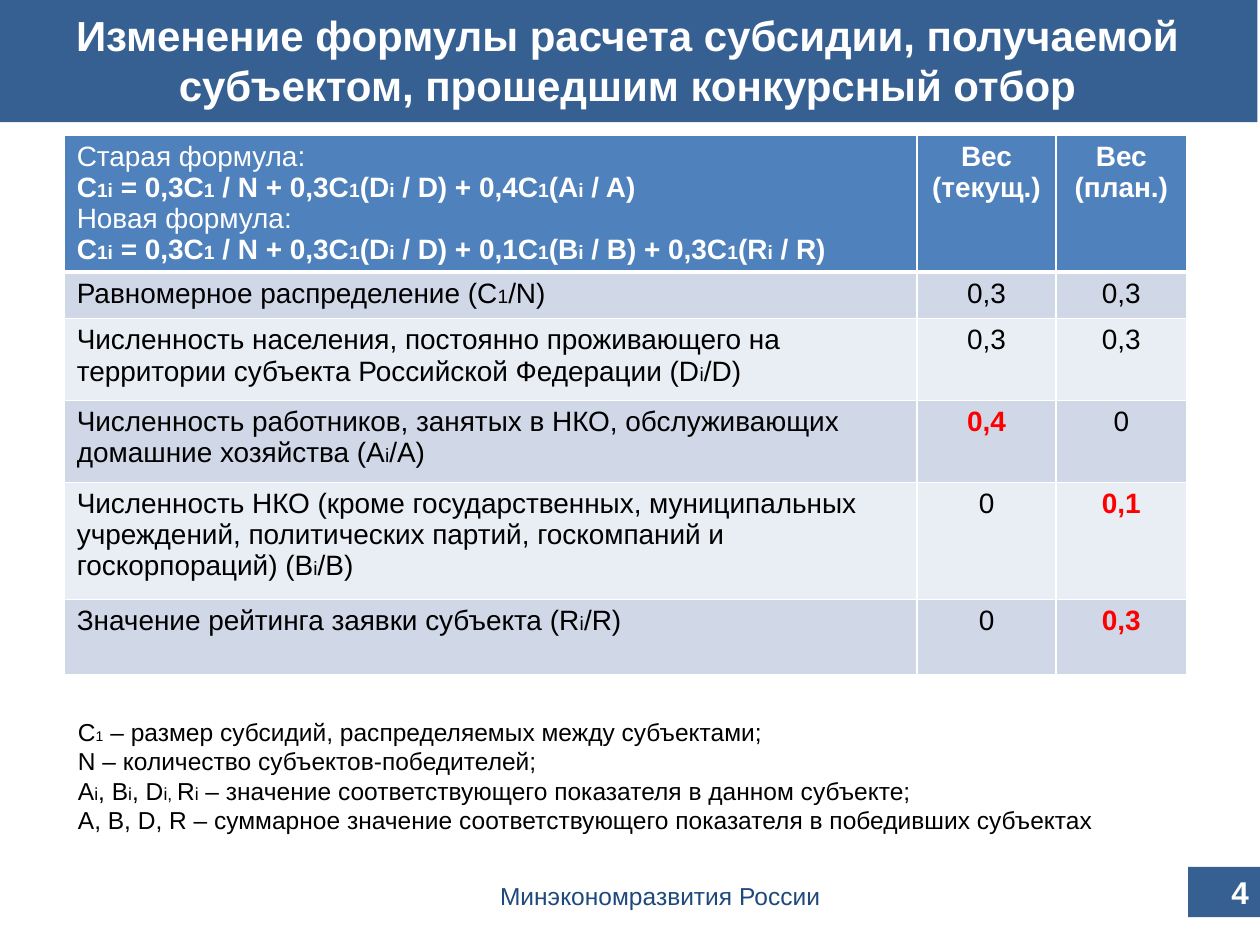
from pptx import Presentation
from pptx.dml.color import RGBColor
from pptx.enum.shapes import MSO_SHAPE
from pptx.enum.text import MSO_ANCHOR, MSO_AUTO_SIZE, PP_ALIGN
from pptx.oxml import parse_xml
from pptx.oxml.ns import nsdecls
from pptx.util import Inches, Pt

LEFT, CENTER, RIGHT = PP_ALIGN.LEFT, PP_ALIGN.CENTER, PP_ALIGN.RIGHT
MIDDLE, NO_FIT = MSO_ANCHOR.MIDDLE, MSO_AUTO_SIZE.NONE
RECTANGLE = MSO_SHAPE.RECTANGLE

FONT = "Arial"
WHITE, BLACK, RED = "FFFFFF", "000000", "FF0000"
NAVY, FOOTER_BLUE, HEADER_BLUE = "376092", "1F497D", "4F81BD"
BANDS = ["D0D8E8", "E9EDF4"]

# Small index characters stand between tildes.
TITLE = "Изменение формулы расчета субсидии, получаемой субъектом, прошедшим конкурсный отбор"
FORMULAS = [
    ("Старая формула:", False),
    ("С~1i~ = 0,3С~1~ / N + 0,3С~1~(D~i~ / D) + 0,4С~1~(A~i~ / A)", True),
    ("Новая формула:", False),
    ("С~1i~ = 0,3С~1~ / N + 0,3С~1~(D~i~ / D) + 0,1С~1~(В~i~ / В) + 0,3С~1~(R~i~ / R)", True),
]
WEIGHT_HEADS = ["Вес (текущ.)", "Вес (план.)"]
# criterion, current weight, planned weight, row height
CRITERIA = [
    ("Равномерное распределение (С~1~/N)", "0,3", "0,3", 0.37),
    ("Численность населения, постоянно проживающего на территории "
     "субъекта Российской Федерации (D~i~/D)", "0,3", "0,3", 0.65),
    ("Численность работников, занятых в НКО, обслуживающих "
     "домашние хозяйства (A~i~/A)", "0,4", "0", 0.65),
    ("Численность НКО (кроме государственных, муниципальных учреждений, "
     "политических партий, госкомпаний и госкорпораций) (B~i~/B)", "0", "0,1", 0.93),
    ("Значение рейтинга заявки субъекта (R~i~/R)", "0", "0,3", 0.6),
]
# note, size of its index characters
NOTES = [
    ("C~1~ – размер субсидий, распределяемых между субъектами;", 8),
    ("N – количество субъектов-победителей;", 10),
    ("A~i~, B~i~, D~i, ~R~i~ – значение соответствующего показателя в данном субъекте;", 10),
    ("А, B, D, R – суммарное значение соответствующего показателя в победивших субъектах", 10),
]
FOOTER = "Минэкономразвития России"
PAGE_NUMBER = "4"

COLUMN_WIDTHS = [6.77, 1.1, 1.04]
HEADER_HEIGHT = 1.08


def rgb(color):
    return RGBColor.from_string(color)


def write(paragraph, text, size, color, bold=False, align=LEFT, index_size=11):
    """Write text, setting the parts between tildes in index_size."""
    paragraph.alignment = align
    for number, part in enumerate(text.split("~")):
        if not part:
            continue
        run = paragraph.add_run()
        run.text = part
        run.font.name = FONT
        run.font.size = Pt(index_size if number % 2 else size)
        run.font.bold = bold
        run.font.color.rgb = rgb(color)


def paragraphs(frame, count):
    return [frame.paragraphs[0]] + [frame.add_paragraph() for _ in range(count - 1)]


def place(shape, left, top, width, height):
    shape.left, shape.top = Inches(left), Inches(top)
    shape.width, shape.height = Inches(width), Inches(height)


def style_bar(shape):
    shape.fill.solid()
    shape.fill.fore_color.rgb = rgb(NAVY)
    shape.line.fill.background()
    shape.text_frame.vertical_anchor = MIDDLE
    shape.text_frame.auto_size = NO_FIT


def style_cell(cell, row, fill):
    """Draw white borders, heavy under the header row, and fill the cell."""
    widths = {"lnL": 1, "lnR": 1, "lnT": 3 if row == 1 else 1, "lnB": 3 if row == 0 else 1}
    properties = cell._tc.get_or_add_tcPr()
    for side, width in widths.items():
        properties.append(parse_xml(
            f'<a:{side} {nsdecls("a")} w="{Pt(width)}"><a:solidFill>'
            f'<a:srgbClr val="{WHITE}"/></a:solidFill></a:{side}>'))
    cell.fill.solid()
    cell.fill.fore_color.rgb = rgb(fill)


def add_text(slide, box, lines, size, color, align=LEFT):
    frame = slide.shapes.add_textbox(*map(Inches, box)).text_frame
    frame.word_wrap = True
    for paragraph, (text, index_size) in zip(paragraphs(frame, len(lines)), lines):
        write(paragraph, text, size, color, align=align, index_size=index_size)


def add_weights_table(slide):
    heights = [HEADER_HEIGHT] + [criterion[-1] for criterion in CRITERIA]
    table = slide.shapes.add_table(
        len(heights), len(COLUMN_WIDTHS), Inches(0.51), Inches(1.07),
        Inches(sum(COLUMN_WIDTHS)), Inches(sum(heights))).table
    for column, width in zip(table.columns, COLUMN_WIDTHS):
        column.width = Inches(width)
    for number, (row, height) in enumerate(zip(table.rows, heights)):
        row.height = Inches(height)
        for cell in row.cells:
            style_cell(cell, number, BANDS[(number - 1) % 2] if number else HEADER_BLUE)

    formula_frame = table.cell(0, 0).text_frame
    for paragraph, (text, bold) in zip(paragraphs(formula_frame, len(FORMULAS)), FORMULAS):
        write(paragraph, text, 16, WHITE, bold)
    for column, head in enumerate(WEIGHT_HEADS, 1):
        write(table.cell(0, column).text_frame.paragraphs[0], head, 16, WHITE, True, CENTER)

    for row, (criterion, current, planned, _) in enumerate(CRITERIA, 1):
        write(table.cell(row, 0).text_frame.paragraphs[0], criterion, 16, BLACK)
        for column, weight in enumerate((current, planned), 1):
            changed = current != planned and weight != "0"
            write(table.cell(row, column).text_frame.paragraphs[0], weight, 16,
                  RED if changed else BLACK, changed, CENTER)


def main():
    presentation = Presentation()
    presentation.slide_width, presentation.slide_height = Inches(10), Inches(7.5)
    slide = presentation.slides.add_slide(presentation.slide_layouts[5])

    title = slide.shapes.title
    place(title, -0.02, -0.02, 10, 0.99)
    style_bar(title)
    write(title.text_frame.paragraphs[0], TITLE, 24, WHITE, True, CENTER)

    add_weights_table(slide)
    add_text(slide, (0.52, 5.64, 8.92, 1.04), NOTES, 14, BLACK)
    add_text(slide, (3.03, 6.94, 4.42, 0.28), [(FOOTER, 14)], 14, FOOTER_BLUE, CENTER)

    page = slide.shapes.add_shape(RECTANGLE, *map(Inches, (9.43, 6.88, 0.58, 0.4)))
    page.shadow.inherit = False
    style_bar(page)
    write(page.text_frame.paragraphs[0], PAGE_NUMBER, 18, WHITE, True, RIGHT)

    presentation.save("out.pptx")


if __name__ == "__main__":
    main()
